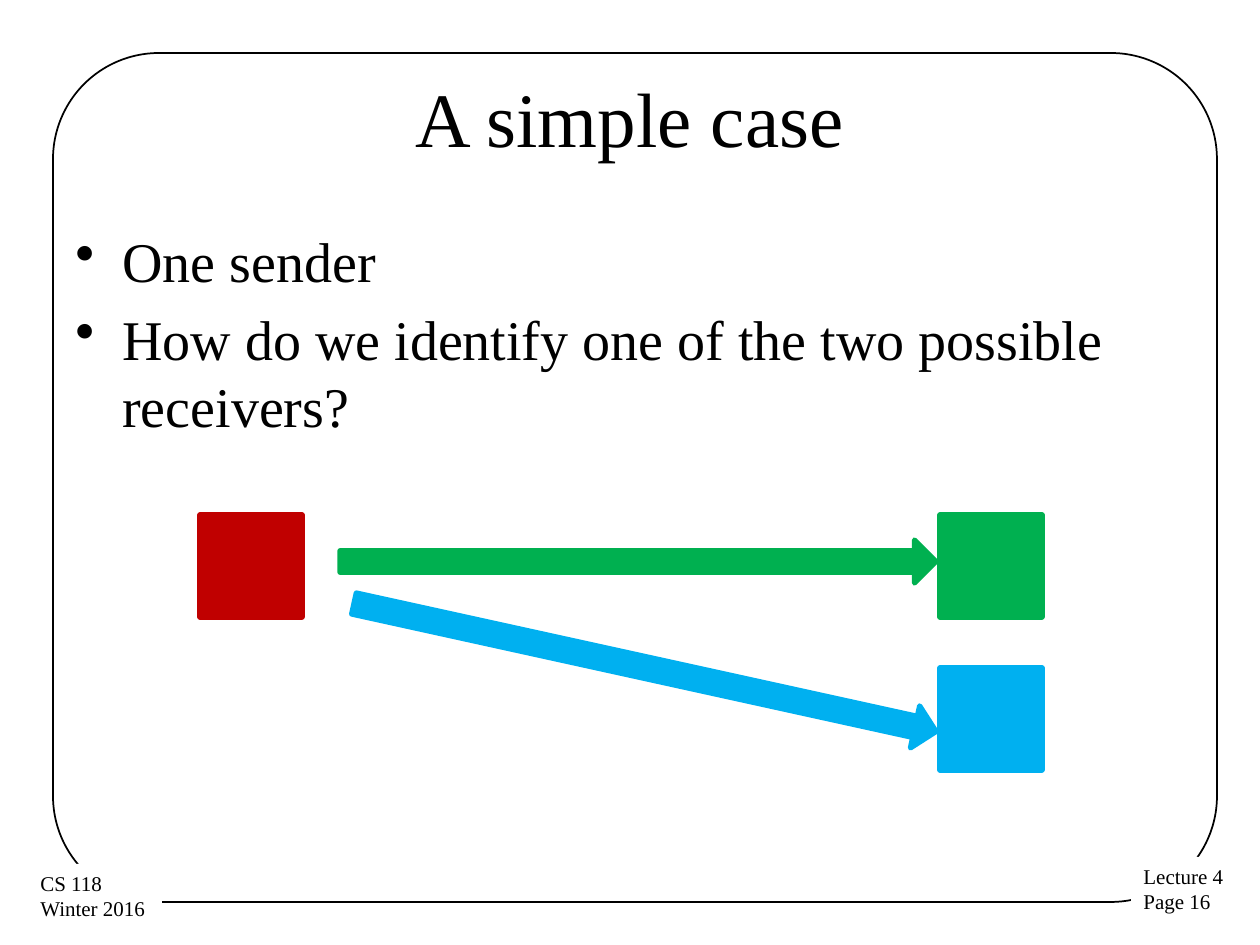
"""Build the slide about one sender and two possible receivers."""
from dataclasses import dataclass

from lxml import etree
from pptx import Presentation
from pptx.dml.color import RGBColor
from pptx.enum.shapes import MSO_SHAPE
from pptx.enum.text import MSO_ANCHOR, PP_ALIGN
from pptx.oxml.ns import qn
from pptx.util import Emu, Pt

RECTANGLE = MSO_SHAPE.RECTANGLE
ROUNDED = MSO_SHAPE.ROUNDED_RECTANGLE
ARROW = MSO_SHAPE.RIGHT_ARROW
TOP, MIDDLE = MSO_ANCHOR.TOP, MSO_ANCHOR.MIDDLE
LEFT, CENTER = PP_ALIGN.LEFT, PP_ALIGN.CENTER
PX_PER_INCH = 126


@dataclass(frozen=True)
class Theme:
    font: str = "Times New Roman"
    black: str = "000000"
    white: str = "FFFFFF"
    red: str = "C00000"
    green: str = "00B050"
    blue: str = "00B0F0"
    title_size: int = 44
    body_size: int = 32
    label_size: int = 12
    thin: int = 1
    thick: int = 3


@dataclass(frozen=True)
class Box:
    left: int
    top: int
    width: int
    height: int


@dataclass(frozen=True)
class Block:
    kind: MSO_SHAPE
    box: Box
    color: str
    rotation: float = 0


@dataclass(frozen=True)
class Label:
    box: Box
    lines: tuple[str, ...]


THEME = Theme()
FRAME = Box(53, 53, 1164, 849)
TITLE = Box(63, 38, 1134, 158)
BODY = Box(63, 220, 1134, 624)
SQUARE = 102
SENDER_LEFT, RECEIVER_LEFT = 200, 940
UPPER_TOP, LOWER_TOP = 515, 668
HANGING = 47

LABELS = (
    Label(Box(1131, 857, 107, 64), ("Lecture 4", "Page 16")),
    Label(Box(28, 864, 134, 64), ("CS 118", "Winter 2016")),
)
BULLETS = ("One sender", "How do we identify one of the two possible receivers?")
BLOCKS = (
    Block(RECTANGLE, Box(SENDER_LEFT, UPPER_TOP, SQUARE, SQUARE), THEME.red),
    Block(RECTANGLE, Box(RECEIVER_LEFT, UPPER_TOP, SQUARE, SQUARE), THEME.green),
    Block(ARROW, Box(340, 540, 596, 43), THEME.green),
    Block(ARROW, Box(347, 646, 596, 43), THEME.blue, 12.4),
    Block(RECTANGLE, Box(RECEIVER_LEFT, LOWER_TOP, SQUARE, SQUARE), THEME.blue),
)


def px(length: int) -> Emu:
    """Turn px into EMU."""
    return Emu(round(length * 914400 / PX_PER_INCH))


def place(box: Box) -> tuple[Emu, Emu, Emu, Emu]:
    """Return the position and size of a box in EMU."""
    return px(box.left), px(box.top), px(box.width), px(box.height)


def add_bullet(paragraph) -> None:
    """Give a paragraph a round bullet and a hanging indent."""
    properties = paragraph._p.get_or_add_pPr()
    properties.set("marL", str(px(HANGING)))
    properties.set("indent", str(-px(HANGING)))
    etree.SubElement(properties, qn("a:buChar")).set("char", "•")


def add_text(slide, box: Box, lines: tuple[str, ...], *, size: int,
             align: PP_ALIGN = LEFT, anchor: MSO_ANCHOR = TOP, wrap: bool = True,
             fill: str | None = None, bullets: bool = False,
             space_before: float = 0) -> None:
    """Add a text box with one paragraph for each line."""
    shape = slide.shapes.add_textbox(*place(box))
    if fill:
        shape.fill.solid()
        shape.fill.fore_color.rgb = RGBColor.from_string(fill)
    frame = shape.text_frame
    frame.word_wrap = wrap
    frame.vertical_anchor = anchor
    frame.text = "\n".join(lines)
    for paragraph in frame.paragraphs:
        paragraph.alignment = align
        paragraph.space_before = Pt(space_before)
        font = paragraph.runs[0].font
        font.name = THEME.font
        font.size = Pt(size)
        font.color.rgb = RGBColor.from_string(THEME.black)
        if bullets:
            add_bullet(paragraph)


def add_frame(slide) -> None:
    """Draw the rounded outline around the slide."""
    shape = slide.shapes.add_shape(ROUNDED, *place(FRAME))
    shape.adjustments[0] = 0.125
    shape.shadow.inherit = False
    shape.fill.background()
    shape.line.color.rgb = RGBColor.from_string(THEME.black)
    shape.line.width = Pt(THEME.thin)


def add_block(slide, block: Block) -> None:
    """Draw one square or arrow in a single colour."""
    shape = slide.shapes.add_shape(block.kind, *place(block.box))
    shape.rotation = block.rotation
    shape.shadow.inherit = False
    color = RGBColor.from_string(block.color)
    shape.fill.solid()
    shape.fill.fore_color.rgb = color
    shape.line.color.rgb = color
    shape.line.width = Pt(THEME.thick)


def main() -> None:
    """Build and save the presentation."""
    presentation = Presentation()
    presentation.slide_width = px(10 * PX_PER_INCH)
    presentation.slide_height = px(945)
    slide = presentation.slides.add_slide(presentation.slide_layouts[6])
    add_frame(slide)
    for label in LABELS:
        add_text(slide, label.box, label.lines, size=THEME.label_size,
                 wrap=False, fill=THEME.white)
    add_text(slide, TITLE, ("A simple case",), size=THEME.title_size,
             align=CENTER, anchor=MIDDLE)
    add_text(slide, BODY, BULLETS, size=THEME.body_size, bullets=True,
             space_before=6.4)
    for block in BLOCKS:
        add_block(slide, block)
    presentation.save("out.pptx")


if __name__ == "__main__":
    main()
